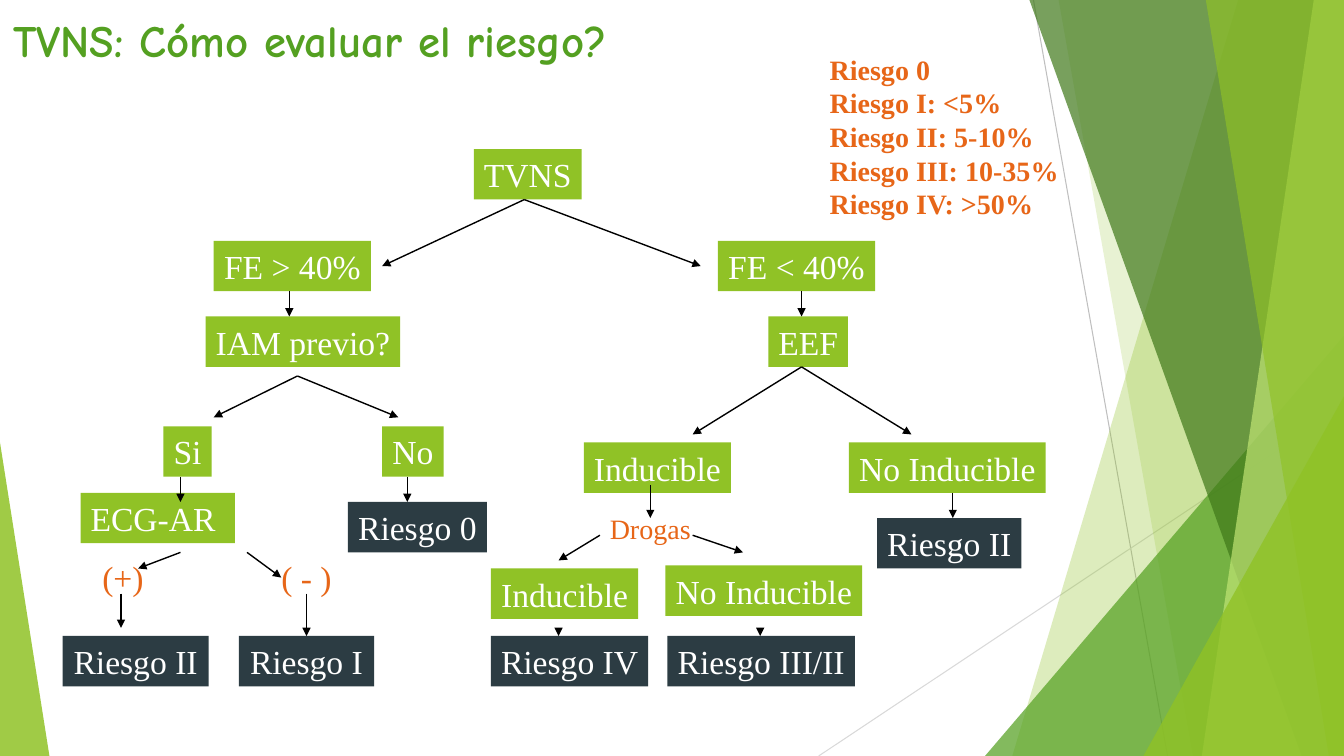
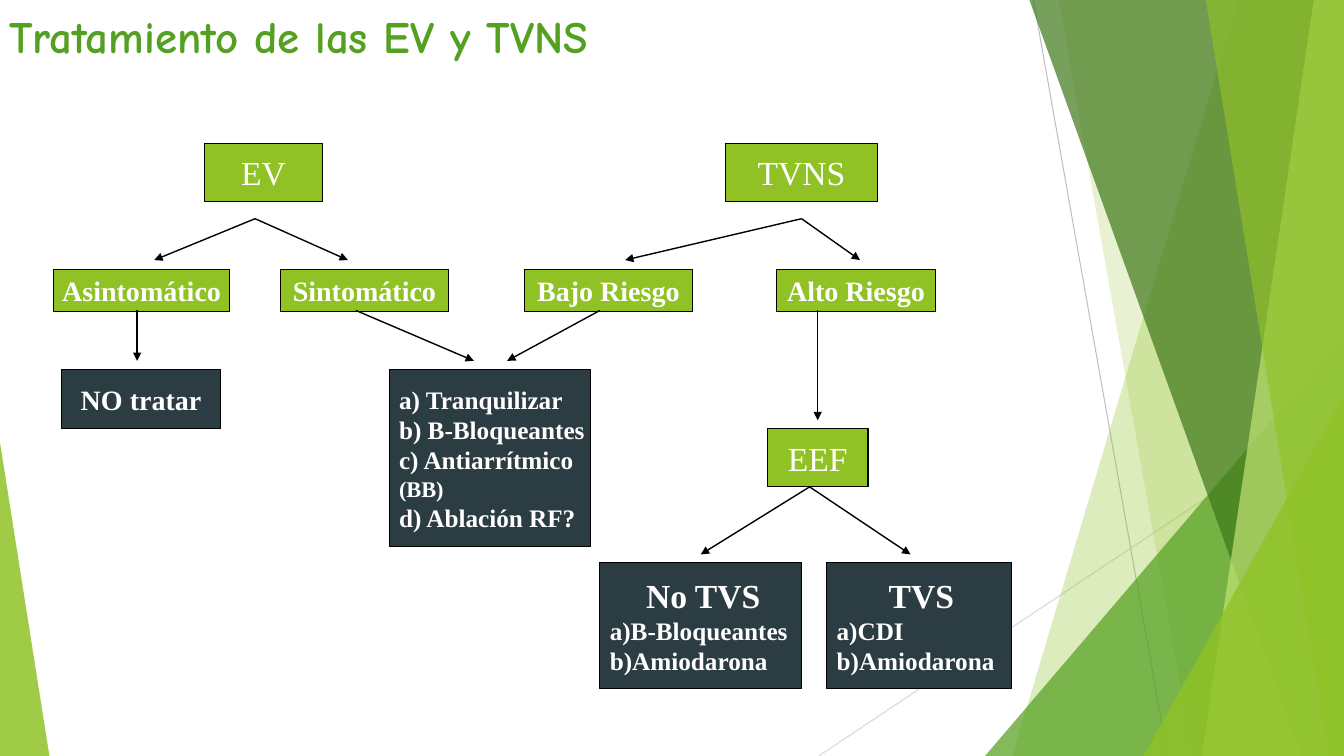
from dataclasses import dataclass

from lxml import etree
from pptx import Presentation
from pptx.dml.color import RGBColor
from pptx.enum.shapes import MSO_CONNECTOR as CONNECTOR, MSO_SHAPE as SHAPE
from pptx.enum.text import MSO_ANCHOR as ANCHOR, MSO_AUTO_SIZE as AUTO_SIZE, PP_ALIGN as ALIGN
from pptx.oxml.ns import qn
from pptx.util import Pt

PX = 9144  # 100 px to the inch
WIDTH, HEIGHT = 1333, 750
BODY_FONT, TITLE_FONT = "Times New Roman", "Comic Neue"
COLOURS = {
    "lime": "90C226", "green": "54A021", "forest": "3F7819", "pale": "C0E474",
    "dark": "2C3C43", "orange": "E76618", "white": "FFFFFF", "black": "000000",
    "grey": "BFBFBF", "light_grey": "D9D9D9",
}


@dataclass
class Box:
    left: int
    top: int
    width: int
    height: int

    def inner(self, left, top, width, height):
        return Box(self.left + left, self.top + top, width, height)

    def emu(self):
        return [value * PX for value in (self.left, self.top, self.width, self.height)]


PAGE = Box(0, 0, WIDTH, HEIGHT)


def rgb(name):
    return RGBColor.from_string(COLOURS[name])


def set_all(target, **values):
    for name, value in values.items():
        setattr(target, name, value)


def paint(shape, fill, opacity=100, border=None):
    shape.shadow.inherit = False
    shape.fill.solid()
    shape.fill.fore_color.rgb = rgb(fill)
    if opacity < 100:
        colour = shape.element.spPr.find(f"{qn('a:solidFill')}/{qn('a:srgbClr')}")
        etree.SubElement(colour, qn("a:alpha"), val=str(opacity * 1000))
    if border:
        shape.line.color.rgb = rgb(border)
        shape.line.width = Pt(0.75)
    else:
        shape.line.fill.background()


def add_line(slide, start, end, colour, width):
    line = slide.shapes.add_connector(
        CONNECTOR.STRAIGHT, *[value * PX for value in (*start, *end)])
    line.line.color.rgb = rgb(colour)
    line.line.width = Pt(width)
    etree.SubElement(line.element.spPr, qn("a:effectLst"))
    return line


def add_arrows(slide, region, start, *ends):
    """Draw one arrow from start to each end, relative to the region."""
    def place(point):
        return region.left + point[0], region.top + point[1]

    for end in ends:
        arrow = add_line(slide, place(start), place(end), "black", 1)
        outline = arrow.element.spPr.find(qn("a:ln"))
        etree.SubElement(outline, qn("a:tailEnd"), type="triangle")


def write(frame, lines, colour="white", bold=False, wrap=False, anchor=ANCHOR.MIDDLE):
    """Fill a text frame with (text, size, alignment) lines."""
    set_all(frame, word_wrap=wrap, auto_size=AUTO_SIZE.NONE, vertical_anchor=anchor,
            margin_left=10 * PX, margin_right=5 * PX if wrap else 10 * PX,
            margin_top=5 * PX, margin_bottom=5 * PX)
    for index, (text, size, align) in enumerate(lines):
        paragraph = frame.add_paragraph() if index else frame.paragraphs[0]
        paragraph.alignment = align
        run = paragraph.add_run()
        run.text = text
        set_all(run.font, name=BODY_FONT, size=Pt(size), bold=bold)
        run.font.color.rgb = rgb(colour)


def add_node(slide, box, lines, fill="lime", border=None, **text_format):
    node = slide.shapes.add_shape(SHAPE.RECTANGLE, *box.emu())
    paint(node, fill, border=border)
    write(node.text_frame, lines, **text_format)


def add_label(slide, box, lines, **text_format):
    label = slide.shapes.add_textbox(*box.emu())
    write(label.text_frame, lines, colour="orange", **text_format)


def centred(text, size=24):
    return [(text, size, ALIGN.CENTER)]


def left_lines(*texts, size):
    return [(text, size, ALIGN.LEFT) for text in texts]


def add_band(slide, top_left, top_right, bottom_right, bottom_left, fill, opacity):
    builder = slide.shapes.build_freeform(top_left, 0, scale=PX)
    builder.add_line_segments(
        [(top_right, 0), (bottom_right, HEIGHT), (bottom_left, HEIGHT)], close=True)
    band = builder.convert_to_shape()
    paint(band, fill, opacity)
    return band


def add_triangle(slide, box, apex, fill, opacity):
    triangle = slide.shapes.add_shape(SHAPE.ISOSCELES_TRIANGLE, *box.emu())
    triangle.adjustments[0] = apex
    paint(triangle, fill, opacity)
    return triangle


def decorate_master(presentation, slide):
    """Build the facets on a slide, then move them behind the master's text."""
    facets = [
        add_line(slide, (1025, 0), (1158, HEIGHT), "grey", 0.75),
        add_line(slide, (WIDTH, 403), (812, HEIGHT), "light_grey", 0.75),
        add_band(slide, 1228, WIDTH, WIDTH, 1004, "lime", 30),
        add_band(slide, 1050, WIDTH, WIDTH, 1183, "lime", 20),
        add_triangle(slide, PAGE.inner(977, 333, 356, 417), 1, "green", 72),
        add_band(slide, 1021, WIDTH, WIDTH, 1291, "forest", 70),
        add_band(slide, 1303, WIDTH, WIDTH, 1192, "pale", 70),
        add_band(slide, 1196, WIDTH, WIDTH, 1318, "lime", 65),
        add_triangle(slide, PAGE.inner(1134, 393, 199, 357), 1, "lime", 80),
        add_triangle(slide, PAGE.inner(0, 439, 49, 311), 0, "lime", 85),
    ]
    tree = presentation.slide_master.shapes.element
    for index, facet in enumerate(facets):
        facet.element.xpath("./*/p:cNvPr")[0].set("id", str(100 + index))
        tree.insert(2 + index, facet.element)


def add_titled_slide(presentation, text, box):
    slide = presentation.slides.add_slide(presentation.slide_layouts[5])
    title = slide.shapes.title
    set_all(title, **dict(zip(("left", "top", "width", "height"), box.emu())))
    write(title.text_frame, left_lines(text, size=32), colour="green", bold=True,
          wrap=True, anchor=ANCHOR.TOP)
    title.text_frame.paragraphs[0].runs[0].font.name = TITLE_FONT
    return slide


def add_steps(slide, region, steps):
    """Place (text, left, top, width, fill) steps of one height in the region."""
    for text, left, top, width, fill in steps:
        add_node(slide, region.inner(left, top, width, 50), centred(text), fill)


def draw_root(slide, region):
    add_steps(slide, region, [("TVNS", 91, 0, 107, "lime")])
    add_arrows(slide, region, (141, 50), (0, 116), (316, 116))


def draw_preserved_branch(slide, region):
    add_steps(slide, region, [
        ("FE > 40%", 152, 0, 156, "lime"),
        ("IAM previo?", 144, 75, 193, "lime"),
        ("Si", 102, 184, 48, "lime"),
        ("No", 319, 184, 61, "lime"),
        ("Riesgo 0", 285, 259, 138, "dark"),
        ("Riesgo II", 2, 392, 145, "dark"),
        ("Riesgo I", 177, 392, 134, "dark"),
    ])
    add_node(slide, region.inner(20, 250, 153, 50), left_lines("ECG-AR", size=24), wrap=True)
    for text, left in (("(+)", 27), ("( - )", 209)):
        add_label(slide, region.inner(left, 309, 70, 50), centred(text))
    for start, *ends in [
        ((227, 50), (227, 75)),
        ((235, 134), (152, 175), (335, 175)),
        ((119, 234), (119, 259)),
        ((344, 234), (344, 259)),
        ((119, 309), (77, 325)),
        ((185, 309), (219, 334)),
        ((60, 350), (60, 384)),
        ((244, 350), (244, 392)),
    ]:
        add_arrows(slide, region, start, *ends)


def draw_reduced_branch(slide, region):
    add_steps(slide, region, [
        ("FE < 40%", 232, 0, 156, "lime"),
        ("EEF", 282, 75, 79, "lime"),
        ("Inducible", 99, 200, 146, "lime"),
        ("No Inducible", 362, 200, 195, "lime"),
        ("Riesgo II", 390, 275, 143, "dark"),
        ("Inducible", 7, 325, 146, "lime"),
        ("No Inducible", 180, 322, 195, "lime"),
        ("Riesgo IV", 7, 392, 156, "dark"),
        ("Riesgo III/II", 182, 392, 186, "dark"),
    ])
    add_label(slide, region.inner(115, 264, 100, 43), centred("Drogas", 20))
    for start, *ends in [
        ((315, 50), (315, 75)),
        ((315, 125), (207, 192), (424, 192)),
        ((465, 250), (465, 275)),
        ((165, 242), (165, 275)),
        ((115, 292), (74, 317)),
        ((207, 292), (257, 309)),
        ((74, 384), (74, 392)),
        ((274, 384), (274, 392)),
    ]:
        add_arrows(slide, region, start, *ends)


def draw_risk_legend(slide, region):
    lines = left_lines("Riesgo 0", "Riesgo I: <5%", "Riesgo II: 5-10%",
                       "Riesgo III: 10-35%", "Riesgo IV: >50%", size=20)
    add_label(slide, region, lines, bold=True, wrap=True, anchor=ANCHOR.TOP)


def add_heading(slide, box, text):
    add_node(slide, box, centred(text), border="black")


def add_group(slide, box, text, fill="lime"):
    add_node(slide, box, centred(text, 20), fill, border="black", bold=True)


def add_treatment(slide, box, lines):
    add_node(slide, box, lines, "dark", border="black", bold=True, wrap=True)


def draw_ev_branch(slide, region):
    add_heading(slide, region.inner(153, 0, 117, 58), "EV")
    add_group(slide, region.inner(3, 125, 175, 42), "Asintomático")
    add_group(slide, region.inner(228, 125, 167, 42), "Sintomático")
    add_group(slide, region.inner(11, 225, 158, 58), "NO tratar", "dark")
    add_arrows(slide, region, (203, 75), (103, 116), (295, 116))
    add_arrows(slide, region, (86, 166), (86, 216))
    add_arrows(slide, region, (303, 166), (420, 216))


def draw_tvns_branch(slide, region):
    add_heading(slide, region.inner(200, 0, 150, 58), "TVNS")
    add_group(slide, region.inner(0, 125, 167, 42), "Bajo Riesgo")
    add_group(slide, region.inner(250, 125, 158, 42), "Alto Riesgo")
    add_heading(slide, region.inner(241, 283, 100, 58), "EEF")
    for result, drug, left, width in (("No TVS", "a)B-Bloqueantes", 75, 200),
                                      ("TVS", "a)CDI", 300, 183)):
        add_treatment(slide, region.inner(left, 416, width, 125),
                      centred(result) + left_lines(drug, "b)Amiodarona", size=18))
    add_arrows(slide, region, (275, 75), (100, 116), (333, 116))
    add_arrows(slide, region, (75, 166), (-17, 216))
    add_arrows(slide, region, (291, 166), (291, 275))
    add_arrows(slide, region, (283, 341), (175, 408), (383, 408))


def draw_shared_treatment(slide, region):
    add_treatment(slide, region, [
        *left_lines("a) Tranquilizar", "b) B-Bloqueantes", "c) Antiarrítmico", size=18),
        *left_lines("(BB)", size=16),
        *left_lines("d) Ablación RF?", size=18),
    ])


def main():
    presentation = Presentation()
    set_all(presentation, slide_width=WIDTH * PX, slide_height=HEIGHT * PX)

    risk = add_titled_slide(presentation, "TVNS: Cómo evaluar el riesgo?", Box(3, 8, 844, 125))
    decorate_master(presentation, risk)
    draw_root(risk, Box(379, 148, 316, 116))
    draw_preserved_branch(risk, Box(60, 239, 423, 442))
    draw_reduced_branch(risk, Box(480, 239, 557, 442))
    draw_risk_legend(risk, Box(813, 47, 249, 178))

    treatment = add_titled_slide(presentation, "Tratamiento de las EV y TVNS", Box(-1, 4, 850, 125))
    draw_ev_branch(treatment, Box(50, 142, 420, 283))
    draw_tvns_branch(treatment, Box(520, 142, 483, 541))
    draw_shared_treatment(treatment, Box(386, 367, 200, 175))

    presentation.save("out.pptx")


if __name__ == "__main__":
    main()
